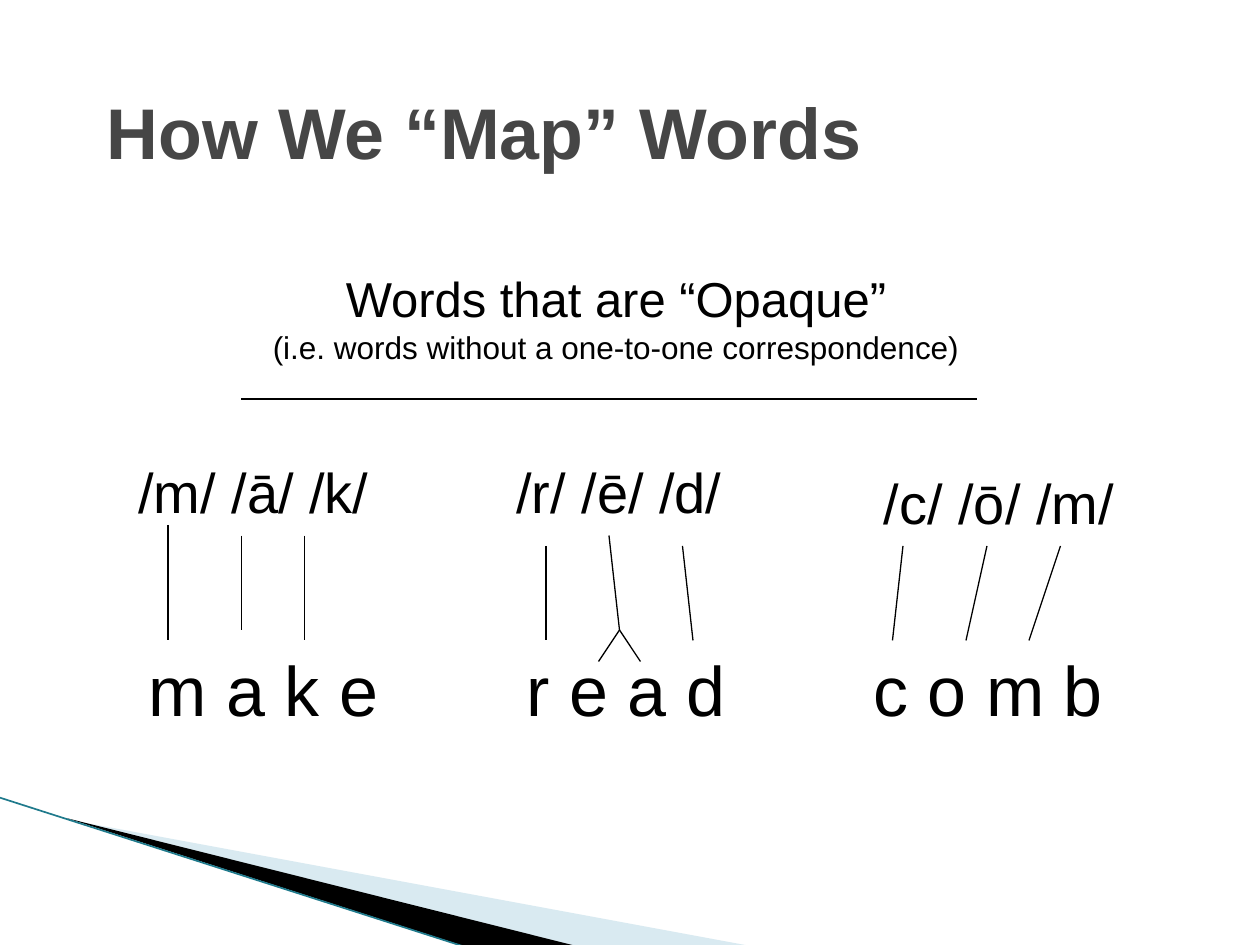
from dataclasses import dataclass

from lxml import etree
from pptx import Presentation
from pptx import util as u
from pptx.dml.color import RGBColor
from pptx.enum import shapes, text
from pptx.oxml.ns import qn


@dataclass(frozen=True)
class Theme:
    font: str = "Arial"
    ink: str = "000000"
    head: str = "464646"
    pale: str = "A0CBDC"
    teal: str = "1F7A8C"
    title: int = 41
    word: int = 40
    sound: int = 32
    lead: int = 28
    note: int = 18
    thin: float = 0.75
    edge: float = 0.95


class Deck:
    def __init__(self, theme, slide):
        self.theme = theme
        self.slide = slide

    def label(self, box, lines, color=None, bold=False, center=False,
              wrap=True, middle=False):
        """Add a text box; lines holds (wording, size) pairs."""
        frame = self.slide.shapes.add_textbox(*map(u.Pt, box)).text_frame
        frame.word_wrap = wrap
        if middle:
            frame.vertical_anchor = text.MSO_ANCHOR.MIDDLE
        for i, (words, size) in enumerate(lines):
            para = frame.add_paragraph() if i else frame.paragraphs[0]
            para.text = words
            if center:
                para.alignment = text.PP_ALIGN.CENTER
            font = para.font
            font.name, font.size, font.bold = self.theme.font, u.Pt(size), bold
            font.color.rgb = RGBColor.from_string(color or self.theme.ink)

    def line(self, ends, color=None, width=None):
        link = self.slide.shapes.add_connector(
            shapes.MSO_CONNECTOR.STRAIGHT, *map(u.Pt, ends))
        link.line.color.rgb = RGBColor.from_string(color or self.theme.ink)
        link.line.width = u.Pt(width or self.theme.thin)
        etree.SubElement(link._element.spPr, qn("a:effectLst"))

    def wedge(self, points, color, alpha=100):
        """Add a filled outline; alpha is its opacity in percent."""
        first, *rest = [tuple(map(u.Pt, p)) for p in points]
        pen = self.slide.shapes.build_freeform(*first)
        pen.add_line_segments(rest, close=True)
        shape = pen.convert_to_shape()
        shape.shadow.inherit = False
        shape.line.fill.background()
        shape.fill.solid()
        shape.fill.fore_color.rgb = RGBColor.from_string(color)
        if alpha < 100:
            tone = shape._element.spPr.find(".//" + qn("a:srgbClr"))
            etree.SubElement(tone, qn("a:alpha"), val=str(alpha * 1000))


# Each word: spelling and its box, sounds and their box, then joining lines.
WORDS = [
    ("m a k e", (78, 366, 150, 55), "/m/ /ā/ /k/", (72, 258, 147, 46),
     [(96, 300, 96, 366), (138, 306, 138, 360), (174, 306, 174, 366)]),
    ("r e a d", (294, 366, 138, 55), "/r/ /ē/ /d/", (288, 258, 132.5, 46),
     [(312, 312, 312, 366), (390, 312, 396, 366), (348, 306, 354, 360),
      (354, 360, 342, 378), (354, 360, 366, 378)]),
    ("c o m b", (492, 366, 162, 55), "/c/ /ō/ /m/", (498, 264, 147, 46),
     [(516, 312, 510, 366), (564, 312, 552, 366), (606, 312, 588, 366)]),
]


def main():
    prs = Presentation()
    prs.slide_width, prs.slide_height = u.Pt(720), u.Pt(540)
    look = Theme()
    deck = Deck(look, prs.slides.add_slide(prs.slide_layouts[6]))

    deck.wedge([(39.5, 468.5), (428.5, 540.5), (328.5, 540.5)], look.pale, 40)
    deck.wedge([(38, 467.5), (329, 540.5), (268, 541.5)], look.ink)
    deck.line((-1, 455.5, 267, 541.5), look.teal, look.edge)

    deck.label((54, 24, 612, 102), [("How We “Map” Words", look.title)],
               color=look.head, bold=True, middle=True)
    deck.label((147, 150, 410, 63),
               [("Words that are “Opaque”", look.lead),
                ("(i.e. words without a one-to-one correspondence)", look.note)],
               center=True, wrap=False)
    deck.line((138, 228, 558, 228))

    for word, low, sounds, high, links in WORDS:
        deck.label(low, [(word, look.word)])
        deck.label(high, [(sounds, look.sound)], wrap=False)
        for ends in links:
            deck.line(ends)

    prs.save("out.pptx")


if __name__ == "__main__":
    main()
